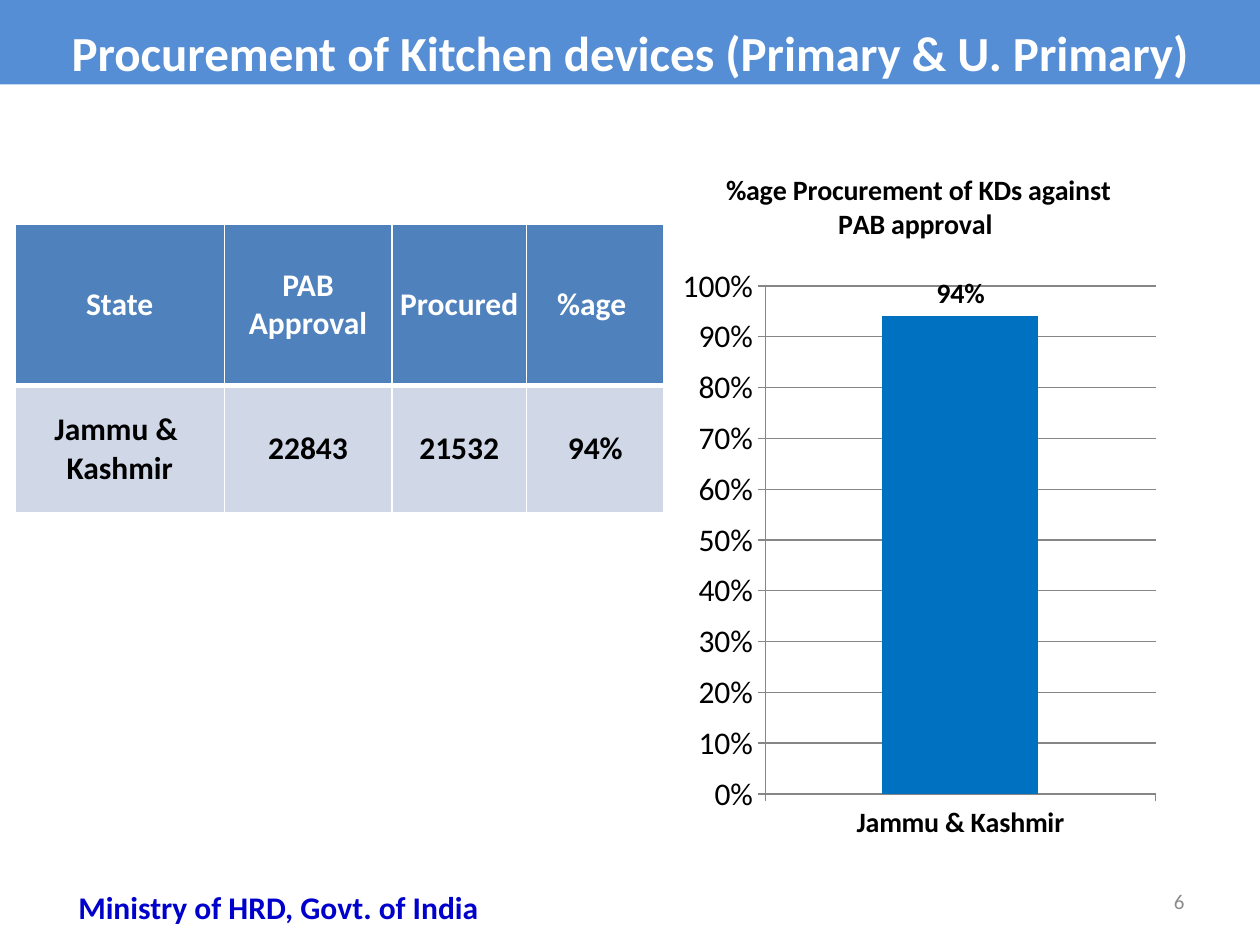
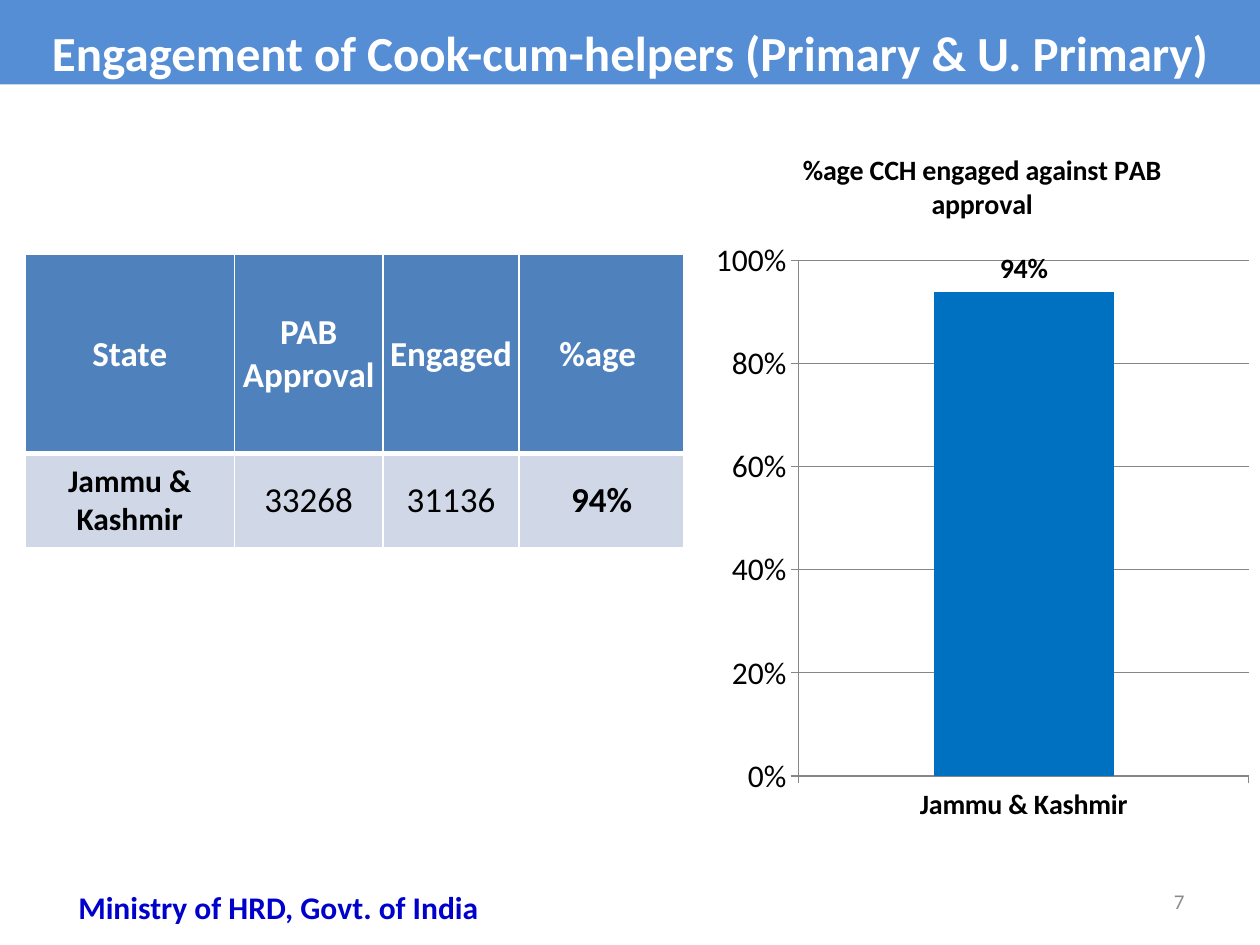
from dataclasses import dataclass

from lxml.etree import SubElement
from pptx import Presentation
from pptx.chart.data import CategoryChartData
from pptx.dml.color import RGBColor
from pptx.enum.chart import XL_CHART_TYPE, XL_LABEL_POSITION, XL_TICK_MARK
from pptx.enum.shapes import MSO_SHAPE
from pptx.enum.text import MSO_ANCHOR, PP_ALIGN
from pptx.oxml import parse_xml
from pptx.oxml.ns import nsdecls, qn
from pptx.util import Inches, Pt


@dataclass(frozen=True)
class Theme:
    """Fonts, colours and type sizes of the deck."""
    font: str = "Calibri"
    white: str = "FFFFFF"
    black: str = "000000"
    band: str = "558ED5"
    head: str = "4F81BD"
    row: str = "D0D8E8"
    bar: str = "0070C0"
    line: str = "868686"
    note: str = "0000CC"
    page: str = "8C8C8C"
    title: int = 28
    large: int = 20
    body: int = 18
    label: int = 16
    small: int = 12


def color(code):
    """Turn a hex code into a colour."""
    return RGBColor.from_string(code)


def box(*sides):
    """Turn left, top, width and height into lengths."""
    return [Inches(side) for side in sides]


class Deck:
    """Holds the style and the current slide."""

    def __init__(self, theme):
        """Start an empty deck."""
        self.theme = theme
        self.show = Presentation()
        self.show.slide_width, self.show.slide_height = box(10, 7.5)
        self.slide = None

    def style(self, font, size, code, bold=False):
        """Set the look of a font."""
        font.name = self.theme.font
        font.size = Pt(size)
        font.bold = bold
        font.color.rgb = color(code)

    def put(self, frame, text, size, code, bold=False, align=PP_ALIGN.CENTER):
        """Put one run into a text frame."""
        frame.word_wrap = True
        para = frame.paragraphs[0]
        para.alignment = align
        run = para.add_run()
        run.text = text
        self.style(run.font, size, code, bold)
        return para

    def page(self, title, number):
        """Add a slide with its title band and footer."""
        look = self.theme
        self.slide = self.show.slides.add_slide(self.show.slide_layouts[6])
        self.band(title)
        self.text(box(7.17, 6.95, 2.33, 0.4), str(number), look.small,
                  look.page, align=PP_ALIGN.RIGHT, anchor=MSO_ANCHOR.MIDDLE)
        self.text(box(0.25, 7, 3.92, 0.4), "Ministry of HRD, Govt. of India",
                  look.body, look.note, bold=True)

    def band(self, title):
        """Add the title band."""
        look = self.theme
        shape = self.slide.shapes.add_shape(
            MSO_SHAPE.RECTANGLE, *box(0, -0.03, 10, 0.7))
        shape.shadow.inherit = False
        shape.fill.solid()
        shape.fill.fore_color.rgb = color(look.band)
        shape.line.fill.background()
        shape.text_frame.vertical_anchor = MSO_ANCHOR.MIDDLE
        para = self.put(shape.text_frame, title, look.title, look.white, True)
        para.line_spacing = 1.4

    def text(self, place, words, size, code, bold=False,
             align=PP_ALIGN.CENTER, anchor=MSO_ANCHOR.TOP):
        """Add a text box."""
        frame = self.slide.shapes.add_textbox(*place).text_frame
        frame.vertical_anchor = anchor
        self.put(frame, words, size, code, bold, align)

    def edge(self, cell, low):
        """Draw the four borders of a cell."""
        props = cell._tc.get_or_add_tcPr()
        for side, width in (("L", 1), ("R", 1), ("T", 1), ("B", low)):
            line = SubElement(props, qn(f"a:ln{side}"), w=str(Pt(width)))
            fill = SubElement(line, qn("a:solidFill"))
            SubElement(fill, qn("a:srgbClr"), val=self.theme.white)

    def table(self, place, cols, rows, cells):
        """Add a table from rows of (text, size, bold) cells."""
        look = self.theme
        grid = self.slide.shapes.add_table(
            len(rows), len(cols), *box(*place, sum(cols), sum(rows))).table
        for col, width in zip(grid.columns, cols):
            col.width = Inches(width)
        for row, height in zip(grid.rows, rows):
            row.height = Inches(height)
        kinds = ((look.head, look.white, 3), (look.row, look.black, 1))
        for row, line, (fill, code, low) in zip(grid.rows, cells, kinds):
            for cell, (words, size, bold) in zip(row.cells, line):
                self.edge(cell, low)
                cell.fill.solid()
                cell.fill.fore_color.rgb = color(fill)
                cell.vertical_anchor = MSO_ANCHOR.MIDDLE
                cell.margin_left = cell.margin_right = 0
                cell.margin_top = cell.margin_bottom = 0
                self.put(cell.text_frame, words, size, code, bold)

    def chart(self, place, title, share, step, plot):
        """Add a column chart of one share."""
        look = self.theme
        data = CategoryChartData(number_format="0%")
        data.categories = ["Jammu & Kashmir"]
        data.add_series("Series 1", [share])
        chart = self.slide.shapes.add_chart(
            XL_CHART_TYPE.COLUMN_CLUSTERED, *box(*place), data).chart
        self.style(chart.font, look.body, look.black)
        chart.has_legend = False
        self.put(chart.chart_title.text_frame, title, look.label,
                 look.black, True)
        self.axes(chart, step)
        self.bars(chart.plots[0])
        self.fit(chart, plot)

    def axes(self, chart, step):
        """Style both axes of a chart."""
        look = self.theme
        cat, val = chart.category_axis, chart.value_axis
        val.minimum_scale, val.maximum_scale, val.major_unit = 0, 1, step
        val.has_major_gridlines = True
        val.tick_labels.number_format = "0%"
        val.tick_labels.number_format_is_linked = False
        self.style(val.tick_labels.font, look.body, look.black)
        self.style(cat.tick_labels.font, look.label, look.black, True)
        for axis in (cat, val):
            axis.major_tick_mark = XL_TICK_MARK.OUTSIDE
        for item in (cat, val, val.major_gridlines):
            item.format.line.color.rgb = color(look.line)
            item.format.line.width = Pt(0.75)

    def bars(self, plot):
        """Style the columns and their labels."""
        look = self.theme
        plot.gap_width = 150
        plot.vary_by_categories = False
        fill = plot.series[0].format.fill
        fill.solid()
        fill.fore_color.rgb = color(look.bar)
        labels = plot.series[0].data_labels
        labels.show_value = True
        labels.number_format = "0%"
        labels.number_format_is_linked = False
        labels.position = XL_LABEL_POSITION.OUTSIDE_END
        self.style(labels.font, look.label, look.black, True)

    def fit(self, chart, plot):
        """Place the inner plot by shares of the chart."""
        area = chart._chartSpace.chart.plotArea
        for old in area.findall(qn("c:layout")):
            area.remove(old)
        modes = '<c:xMode val="edge"/><c:yMode val="edge"/>'
        sizes = "".join(f'<c:{key} val="{part}"/>'
                        for key, part in zip("xywh", plot))
        area.insert(0, parse_xml(
            f'<c:layout {nsdecls("c")}><c:manualLayout>'
            f'<c:layoutTarget val="inner"/>{modes}{sizes}'
            '</c:manualLayout></c:layout>'))


def main():
    """Build both slides."""
    look = Theme()
    deck = Deck(look)
    body, large = look.body, look.large

    deck.page("Procurement of Kitchen devices (Primary & U. Primary)", 6)
    heads = ("State", "PAB Approval", "Procured", "%age ")
    facts = ("Jammu &  Kashmir", "22843", "21532", "94%")
    deck.table((0.12, 1.78), (1.66, 1.33, 1.07, 1.09), (1.28, 1.01),
               [[(word, body, True) for word in line]
                for line in (heads, facts)])
    deck.chart((5.33, 1.15, 3.92, 5.6),
               "%age Procurement of KDs against PAB approval ",
               0.94, 0.1, (0.19, 0.2, 0.79, 0.72))

    deck.page("Engagement of Cook-cum-helpers (Primary & U. Primary)", 7)
    heads = ("State", "PAB Approval", "Engaged", "%age ")
    facts = [("Jammu & Kashmir", body, True), ("33268", large, False),
             ("31136", large, False), ("94%", large, True)]
    deck.table((0.2, 2.02), (1.66, 1.18, 1.08, 1.31), (1.58, 0.75),
               [[(word, large, True) for word in heads], facts])
    deck.chart((5.59, 0.99, 4.41, 5.68),
               "%age CCH engaged against PAB approval",
               0.94, 0.2, (0.17, 0.19, 0.81, 0.72))

    deck.show.save("out.pptx")


if __name__ == "__main__":
    main()
